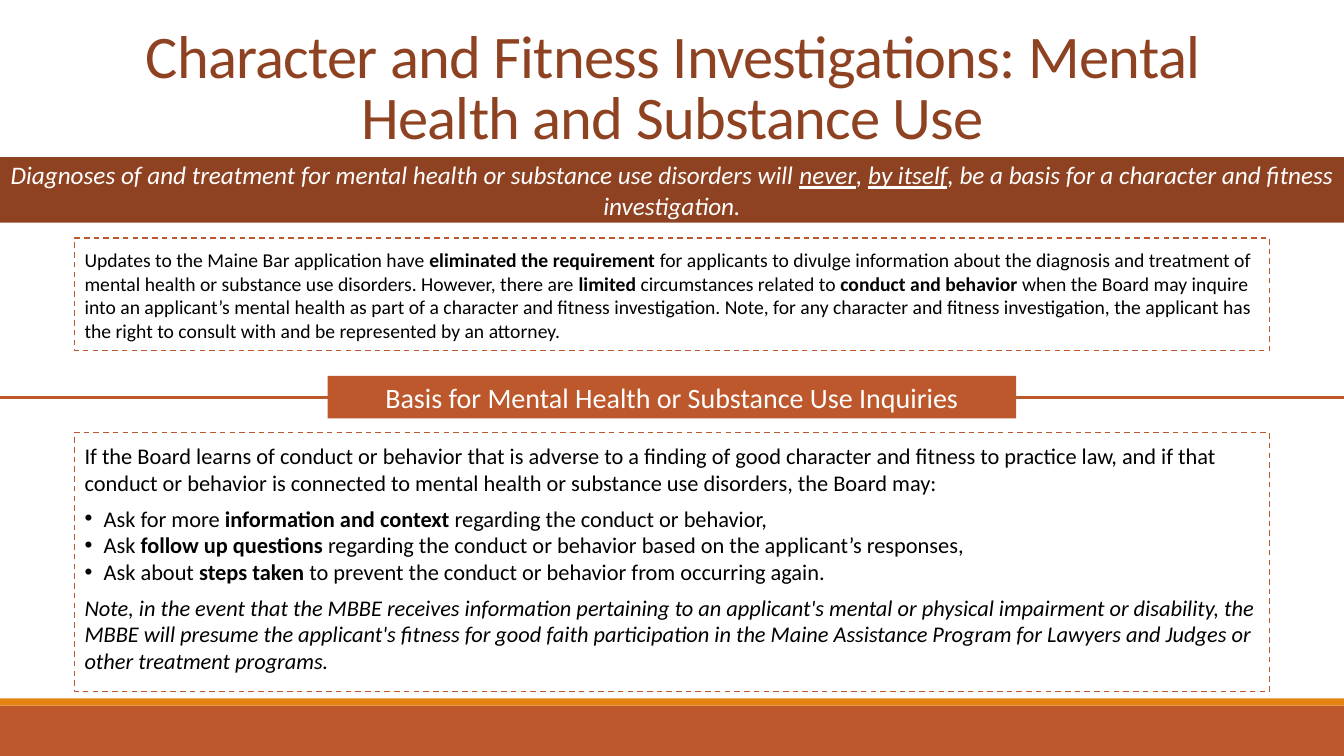
from lxml.etree import SubElement
from pptx import Presentation
from pptx.dml.color import RGBColor
from pptx.enum.dml import MSO_LINE_DASH_STYLE as Dash
from pptx.enum.shapes import MSO_CONNECTOR as Connector, MSO_SHAPE as Shape
from pptx.enum.text import MSO_ANCHOR as Anchor, MSO_AUTO_SIZE as AutoSize, PP_ALIGN as Align
from pptx.oxml.ns import qn
from pptx.util import Inches, Pt

WIDTH, HEIGHT = 13.33, 7.5
FONT = "Calibri"
BROWN = RGBColor(0x8E, 0x42, 0x21)
RUST = RGBColor(0xBD, 0x58, 0x2C)
ORANGE = RGBColor(0xE4, 0x83, 0x12)
WHITE = RGBColor(0xFF, 0xFF, 0xFF)
BLACK = RGBColor(0, 0, 0)

TITLE = "Character and Fitness Investigations: Mental Health and Substance Use"
PRINCIPLE = (
    "Diagnoses of and treatment for mental health or substance use disorders will "
    "*never*, *by itself*, be a basis for a character and fitness investigation."
)
UPDATES = (
    "Updates to the Maine Bar application have *eliminated the requirement *for applicants "
    "to divulge information about the diagnosis and treatment of mental health or substance "
    "use disorders. However, there are *limited* circumstances related to *conduct and "
    "behavior *when the Board may inquire into an applicant’s mental health as part of a "
    "character and fitness investigation. Note, for any character and fitness investigation, "
    "the applicant has the right to consult with and be represented by an attorney."
)
HEADING = "Basis for Mental Health or Substance Use Inquiries"
CONDITION = (
    "If the Board learns of conduct or behavior that is adverse to a finding of good "
    "character and fitness to practice law, and if that conduct or behavior is connected "
    "to mental health or substance use disorders, the Board may:"
)
ACTIONS = [
    "Ask for more *information and context *regarding the conduct or behavior,",
    "Ask *follow up questions *regarding the conduct or behavior based on the applicant’s responses,",
    "Ask about *steps taken *to prevent the conduct or behavior from occurring again.",
]
NOTE = (
    "Note, in the event that the MBBE receives information pertaining to an applicant's "
    "mental or physical impairment or disability, the MBBE will presume the applicant's "
    "fitness for good faith participation in the Maine Assistance Program for Lawyers and "
    "Judges or other treatment programs."
)


def add_box(slide, box, fill=None, dashed=False):
    panel = slide.shapes.add_shape(Shape.RECTANGLE, *map(Inches, box))
    panel.shadow.inherit = False
    if fill is None:
        panel.fill.background()
    else:
        panel.fill.solid()
        panel.fill.fore_color.rgb = fill
    if dashed:
        panel.line.color.rgb = RUST
        panel.line.width = Pt(1)
        panel.line.dash_style = Dash.DASH
    else:
        panel.line.fill.background()
    return panel


def prepare_frame(panel, anchor, inset=0.1):
    frame = panel.text_frame
    frame.word_wrap = True
    frame.vertical_anchor = anchor
    frame.margin_left = frame.margin_right = Inches(0.1)
    frame.margin_top = frame.margin_bottom = Inches(inset)
    return frame


def write(paragraph, text, size, color, align=Align.LEFT, underline=False):
    paragraph.alignment = align
    paragraph.font.name = FONT
    paragraph.font.size = Pt(size)
    paragraph.font.color.rgb = color
    for index, piece in enumerate(text.split("*")):
        run = paragraph.add_run()
        run.text = piece
        if index % 2:
            if underline:
                run.font.underline = True
            else:
                run.font.bold = True


def add_bullet(paragraph):
    properties = paragraph._p.get_or_add_pPr()
    properties.set("marL", str(Inches(0.19)))
    properties.set("indent", str(-Inches(0.19)))
    bullet_font = SubElement(properties, qn("a:buFont"))
    bullet_font.set("typeface", "Arial")
    SubElement(properties, qn("a:buChar")).set("char", "•")
    defaults = properties.find(qn("a:defRPr"))
    if defaults is not None:
        properties.append(defaults)


def add_footer(slide, box):
    left, top, width, height = box
    stripe = 0.07
    add_box(slide, (left, top + stripe, width, height - stripe), RUST)
    add_box(slide, (left, top, width, stripe), ORANGE)


def place_title(slide, box):
    title = slide.shapes.title
    title.left, title.top, title.width, title.height = map(Inches, box)
    frame = prepare_frame(title, Anchor.BOTTOM, 0.05)
    frame.auto_size = AutoSize.NONE
    paragraph = frame.paragraphs[0]
    write(paragraph, TITLE, 43.2, BROWN, Align.CENTER)
    paragraph.line_spacing = 0.85
    paragraph.runs[0].font._element.set("spc", "-50")


def add_principle(slide, box):
    banner = add_box(slide, box, BROWN)
    paragraph = prepare_frame(banner, Anchor.MIDDLE).paragraphs[0]
    write(paragraph, PRINCIPLE, 18, WHITE, Align.CENTER, underline=True)
    paragraph.font.italic = True


def add_updates(slide, box):
    panel = add_box(slide, box, dashed=True)
    write(prepare_frame(panel, Anchor.TOP).paragraphs[0], UPDATES, 14, BLACK)


def add_heading(slide, box):
    left, top, width, height = box
    label_width = 6.83
    middle = Inches(top + height / 2)
    rule = slide.shapes.add_connector(
        Connector.STRAIGHT, Inches(left), middle, Inches(left + width), middle)
    rule.line.color.rgb = RUST
    rule.line.width = Pt(2.25)
    SubElement(rule._element.spPr, qn("a:effectLst"))
    label = add_box(slide, (left + (width - label_width) / 2, top, label_width, height), RUST)
    paragraph = prepare_frame(label, Anchor.MIDDLE, 0.05).paragraphs[0]
    write(paragraph, HEADING, 20, WHITE, Align.CENTER)


def add_inquiries(slide, box):
    frame = prepare_frame(add_box(slide, box, WHITE, dashed=True), Anchor.TOP)
    condition = frame.paragraphs[0]
    write(condition, CONDITION, 16, BLACK)
    condition.space_after = Pt(6)
    for action in ACTIONS:
        item = frame.add_paragraph()
        write(item, action, 16, BLACK)
        add_bullet(item)
    item.space_after = Pt(6)
    note = frame.add_paragraph()
    write(note, NOTE, 16, BLACK)
    note.font.italic = True
    note.space_after = Pt(6)


def main():
    deck = Presentation()
    deck.slide_width, deck.slide_height = Inches(WIDTH), Inches(HEIGHT)
    slide = deck.slides.add_slide(deck.slide_layouts[5])
    add_footer(slide, (0, 6.93, WIDTH, HEIGHT - 6.93))
    place_title(slide, (0.92, 0.11, 11.5, 1.45))
    add_updates(slide, (0.74, 2.36, 11.85, 1.12))
    add_principle(slide, (0, 1.56, WIDTH, 0.65))
    add_heading(slide, (0, 3.73, WIDTH, 0.42))
    add_inquiries(slide, (0.74, 4.29, 11.85, 2.57))
    deck.save("out.pptx")


if __name__ == "__main__":
    main()
